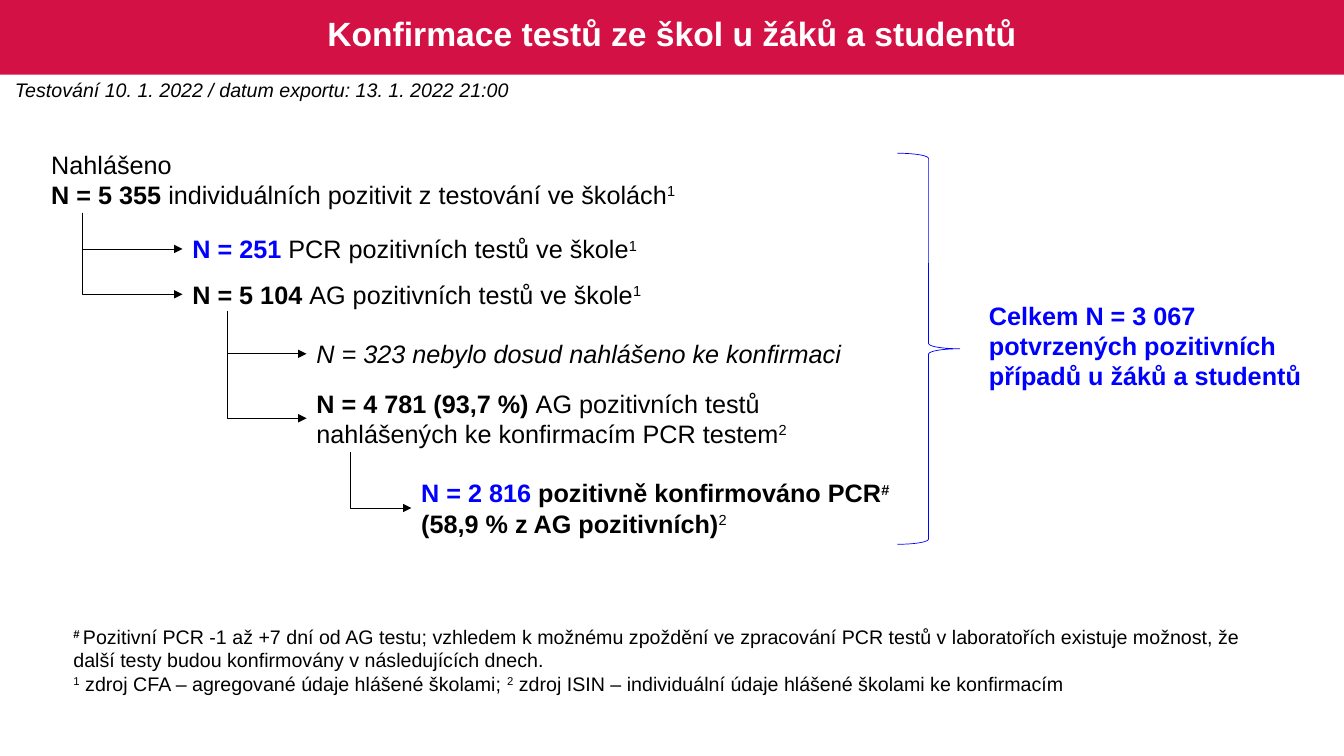
from dataclasses import dataclass

import pptx
import pptx.dml.color
import pptx.enum.shapes
import pptx.enum.text
import pptx.oxml.ns
import pptx.util
from lxml import etree
from pptx.shapes.autoshape import Shape
from pptx.slide import Slide
from pptx.util import Inches


@dataclass(frozen=True)
class Theme:
    font: str = "Arial"
    band: str = "D31145"
    white: str = "FFFFFF"
    black: str = "000000"
    blue: str = "0000FF"
    title_size: int = 24
    body_size: int = 18
    note_size: int = 14
    line_width: float = 0.5


THEME = Theme()


@dataclass(frozen=True)
class Span:
    text: str
    bold: bool = False
    italic: bool = False
    raised: bool = False
    color: str = THEME.black


@dataclass(frozen=True)
class TextBlock:
    left: float
    top: float
    width: float
    height: float
    lines: list[list[Span]]
    size: int = THEME.body_size
    is_title: bool = False


@dataclass(frozen=True)
class Branch:
    left: float
    top: float
    right: float
    bottom: float


ONE = Span("1", raised=True)
TWO = Span("2", raised=True)

BLOCKS = [
    TextBlock(0.18, 0.04, 12.97, 0.63, [
        [Span("Konfirmace testů ze škol u žáků a studentů", bold=True, color=THEME.white)],
    ], THEME.title_size, is_title=True),
    TextBlock(0.05, 0.72, 5.58, 0.34, [
        [Span("Testování 10. 1. 2022 / datum exportu: 13. 1. 2022 21:00", italic=True)],
    ], THEME.note_size),
    TextBlock(0.41, 1.43, 8.12, 0.71, [
        [Span("Nahlášeno")],
        [Span("N = 5 355 ", bold=True), Span("individuálních pozitivit z testování ve školách"), ONE],
    ]),
    TextBlock(1.81, 2.27, 4.79, 0.4, [
        [Span("N = 251 ", bold=True, color=THEME.blue), Span("PCR pozitivních testů ve škole"), ONE],
    ]),
    TextBlock(1.81, 2.72, 4.9, 0.4, [
        [Span("N = 5 104 ", bold=True), Span("AG pozitivních testů ve škole"), ONE],
    ]),
    TextBlock(3.04, 3.31, 5.68, 0.4, [
        [Span("N = 323 nebylo dosud nahlášeno ke konfirmaci", italic=True)],
    ]),
    TextBlock(3.04, 3.8, 5.15, 0.71, [
        [Span("N = 4 781 (93,7 %) ", bold=True),
         Span("AG pozitivních testů nahlášených ke konfirmacím PCR testem"), TWO],
    ]),
    TextBlock(4.08, 4.69, 4.96, 0.71, [
        [Span("N = 2 816", bold=True, color=THEME.blue),
         Span(" pozitivně konfirmováno PCR", bold=True), Span("#", bold=True, raised=True)],
        [Span("(58,9 % z AG pozitivních)", bold=True), TWO],
    ]),
    TextBlock(9.71, 2.93, 3.38, 1.01, [
        [Span("Celkem N = 3 067 potvrzených pozitivních případů u žáků a studentů",
              bold=True, color=THEME.blue)],
    ]),
    TextBlock(0.63, 6.15, 12.06, 1.04, [
        [Span("# ", bold=True, raised=True),
         Span("Pozitivní PCR -1 až +7 dní od AG testu; vzhledem k možnému zpoždění ve zpracování "
              "PCR testů v laboratořích existuje možnost, že další testy budou konfirmovány "
              "v následujících dnech.")],
        [ONE, Span(" zdroj CFA – agregované údaje hlášené školami; "),
         TWO, Span(" zdroj ISIN – individuální údaje hlášené školami ke konfirmacím")],
    ], THEME.note_size),
]

BRANCHES = [
    Branch(0.82, 2.11, 1.81, 2.47),
    Branch(0.82, 2.11, 1.81, 2.92),
    Branch(2.25, 3.09, 3.04, 3.51),
    Branch(2.25, 3.09, 3.04, 4.15),
    Branch(3.47, 4.48, 4.08, 5.04),
]


def rgb(color: str) -> pptx.dml.color.RGBColor:
    return pptx.dml.color.RGBColor.from_string(color)


def draw_band(page: Slide) -> None:
    band = page.shapes.add_shape(
        pptx.enum.shapes.MSO_SHAPE.RECTANGLE, 0, 0, Inches(13.33), Inches(0.74))
    band.shadow.inherit = False
    band.fill.solid()
    band.fill.fore_color.rgb = rgb(THEME.band)
    band.line.fill.background()


def draw_block(page: Slide, block: TextBlock) -> Shape:
    box = page.shapes.add_textbox(
        Inches(block.left), Inches(block.top), Inches(block.width), Inches(block.height))
    frame = box.text_frame
    frame.word_wrap = True
    frame.text = "\n".join(line[0].text for line in block.lines)
    for para, line in zip(frame.paragraphs, block.lines):
        for extra in line[1:]:
            para.add_run().text = extra.text
        for run, span in zip(para.runs, line):
            run.font.name = THEME.font
            run.font.size = pptx.util.Pt(block.size)
            run.font.bold = span.bold
            run.font.italic = span.italic
            run.font.color.rgb = rgb(span.color)
            if span.raised:
                run.font._element.set("baseline", "30000")
        if block.is_title:
            para.alignment = pptx.enum.text.PP_ALIGN.CENTER
            para.line_spacing = 0.9
    if block.is_title:
        frame.vertical_anchor = pptx.enum.text.MSO_ANCHOR.MIDDLE
    else:
        frame.auto_size = pptx.enum.text.MSO_AUTO_SIZE.SHAPE_TO_FIT_TEXT
    return box


def draw_branch(page: Slide, branch: Branch) -> None:
    across = branch.right - branch.left
    down = branch.bottom - branch.top
    left = (branch.left + branch.right - down) / 2
    top = (branch.top + branch.bottom - across) / 2
    arrow = page.shapes.add_connector(
        pptx.enum.shapes.MSO_CONNECTOR.ELBOW,
        Inches(left + down), Inches(top), Inches(left), Inches(top + across))
    arrow.line.color.rgb = rgb(THEME.black)
    arrow.line.width = pptx.util.Pt(THEME.line_width)
    qn = pptx.oxml.ns.qn
    properties = arrow._element.spPr
    properties.find(qn("a:xfrm")).set("rot", str(270 * 60000))
    properties.find(qn("a:prstGeom")).set("prst", "bentConnector2")
    etree.SubElement(properties.find(qn("a:ln")), qn("a:tailEnd"), type="triangle")
    etree.SubElement(properties, qn("a:effectLst"))


def draw_brace(page: Slide) -> None:
    brace = page.shapes.add_shape(
        pptx.enum.shapes.MSO_SHAPE.RIGHT_BRACE,
        Inches(8.9), Inches(1.52), Inches(0.62), Inches(3.88))
    brace.shadow.inherit = False
    brace.fill.background()
    brace.line.color.rgb = rgb(THEME.blue)
    brace.line.width = pptx.util.Pt(THEME.line_width)


def main() -> None:
    deck = pptx.Presentation()
    deck.slide_width = Inches(13.33)
    deck.slide_height = Inches(7.5)
    page = deck.slides.add_slide(deck.slide_layouts[6])
    draw_band(page)
    for block in BLOCKS:
        draw_block(page, block)
    for branch in BRANCHES:
        draw_branch(page, branch)
    draw_brace(page)
    deck.save("out.pptx")


if __name__ == "__main__":
    main()
